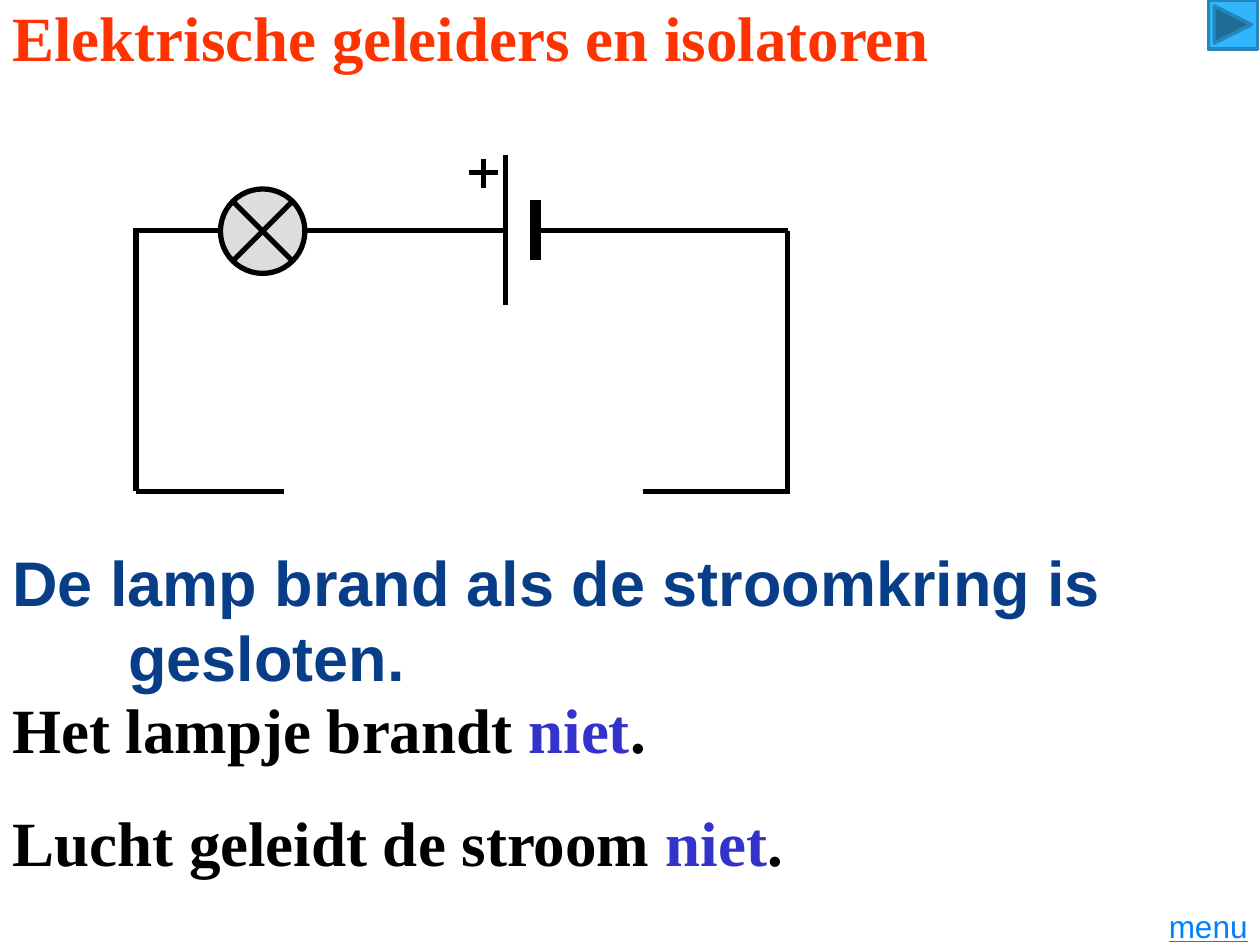
"""Build the slide on electrical conductors and insulators."""
import lxml.etree
import pptx
import pptx.dml.color
import pptx.enum.shapes
import pptx.enum.text
import pptx.oxml.ns
import pptx.util

Inches, Pt = pptx.util.Inches, pptx.util.Pt
PRESET = pptx.enum.shapes.MSO_SHAPE
ALIGN = pptx.enum.text.PP_ALIGN


def color(hex_value):
    return pptx.dml.color.RGBColor.from_string(hex_value)


presentation = pptx.Presentation()
presentation.slide_width, presentation.slide_height = Inches(10), Inches(7.5)
slide = presentation.slides.add_slide(presentation.slide_layouts[6])

BLACK, BLUE = "000000", "3333CC"
SERIF, SANS = "Times New Roman", "Arial"
hanging = Inches(0.92)

statements = [
    (4.62, 0.58, SANS, [("De lamp brand als de stroomkring is gesloten.", "073E87")]),
    (5.48, 0.6, SERIF, [("Het lampje brandt ", BLACK), ("niet", BLUE), (".", BLACK)]),
    (6.35, 0.66, SERIF, [("Lucht geleidt de stroom ", BLACK), ("niet", BLUE), (".", BLACK)]),
    (0, 0.58, SERIF, [("Elektrische geleiders en isolatoren", "FF3300")]),
]
for top, height, font_name, parts in statements:
    statement = slide.shapes.add_textbox(0, Inches(top), Inches(10), Inches(height))
    frame = statement.text_frame
    frame.word_wrap = True
    frame.vertical_anchor = pptx.enum.text.MSO_ANCHOR.MIDDLE
    paragraph = frame.paragraphs[0]
    properties = paragraph._p.get_or_add_pPr()
    properties.set("marL", str(hanging))
    properties.set("indent", str(-hanging))
    for wording, text_color in parts:
        run = paragraph.add_run()
        run.text = wording
        run.font.name, run.font.size, run.font.bold = font_name, Pt(36), True
        run.font.color.rgb = color(text_color)

left, right, top, bottom = 1.08, 6.25, 1.83, 3.9
plus_pole, minus_pole = 4.01, 4.25
lamp_left, lamp_size = 1.75, 0.67
wires = [
    (left, top, lamp_left, top, 3),
    (lamp_left + lamp_size, top, plus_pole, top, 3),
    (minus_pole, top, right, top, 3),
    (left, top - 0.02, left, bottom, 3),
    (right, top, right, bottom + 0.02, 3),
    (left, bottom, 2.25, bottom, 3),
    (5.1, bottom, right + 0.02, bottom, 3),
    (plus_pole, 1.23, plus_pole, 2.42, 3),
    (minus_pole, 1.59, minus_pole, 2.06, 6),
    (3.84, 1.26, 3.84, 1.49, 3),
    (3.72, 1.37, 3.95, 1.37, 3),
]
for x1, y1, x2, y2, width in wires:
    wire = slide.shapes.add_connector(
        pptx.enum.shapes.MSO_CONNECTOR.STRAIGHT,
        Inches(x1), Inches(y1), Inches(x2), Inches(y2))
    wire.line.color.rgb = color(BLACK)
    wire.line.width = Pt(width)
    lxml.etree.SubElement(wire._element.spPr, pptx.oxml.ns.qn("a:effectLst"))

symbols = [
    (PRESET.FLOWCHART_SUMMING_JUNCTION, lamp_left, 1.5, lamp_size, "DDDDDD", BLACK, 3),
    (PRESET.ACTION_BUTTON_FORWARD_OR_NEXT, 9.59, 0, 0.39, "31B6FD", "2487BB", 2),
]
for preset, x, y, size, fill, outline, width in symbols:
    symbol = slide.shapes.add_shape(preset, Inches(x), Inches(y), Inches(size), Inches(size))
    symbol.shadow.inherit = False
    symbol.fill.solid()
    symbol.fill.fore_color.rgb = color(fill)
    symbol.line.color.rgb = color(outline)
    symbol.line.width = Pt(width)

menu = slide.shapes.add_textbox(Inches(9.06), Inches(7.19), Inches(0.94), Inches(0.31))
menu.text_frame.word_wrap = True
menu.text_frame.vertical_anchor = pptx.enum.text.MSO_ANCHOR.MIDDLE
menu_line = menu.text_frame.paragraphs[0]
menu_line.text = "menu"
menu_line.alignment = ALIGN.RIGHT
menu_font = menu_line.runs[0].font
menu_font.name, menu_font.size, menu_font.underline = SANS, Pt(18), True
menu_font.color.rgb = color("0080FF")

presentation.save("out.pptx")
